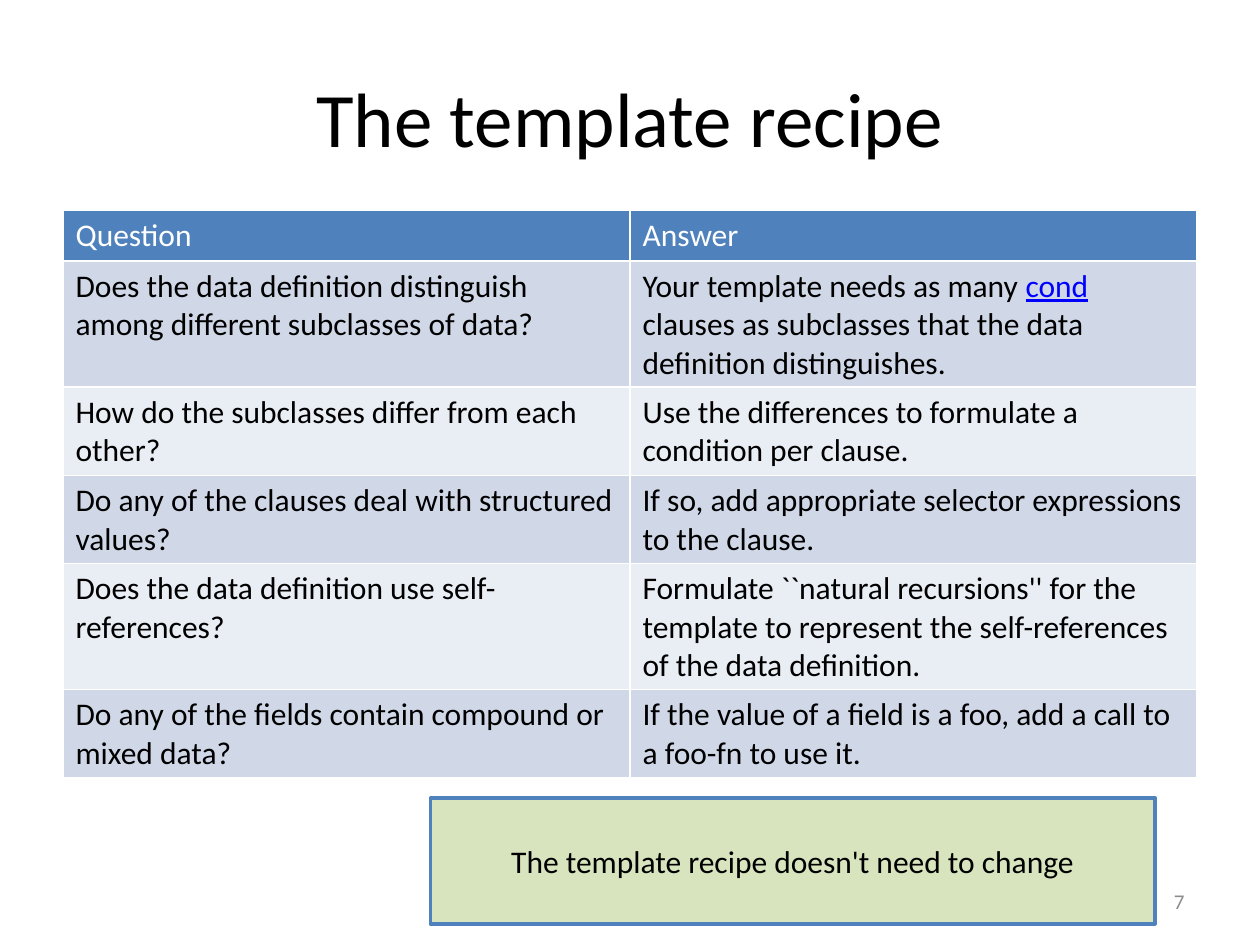
from dataclasses import dataclass

from pptx import Presentation
from pptx.dml.color import RGBColor
from pptx.enum.shapes import MSO_SHAPE
from pptx.enum.text import MSO_ANCHOR, PP_ALIGN
from pptx.util import Pt

RECTANGLE = MSO_SHAPE.RECTANGLE
MIDDLE = MSO_ANCHOR.MIDDLE
LEFT, CENTER, RIGHT = PP_ALIGN.LEFT, PP_ALIGN.CENTER, PP_ALIGN.RIGHT


@dataclass(frozen=True)
class Theme:
    font: str = "Calibri"
    title: int = 44
    body: int = 18
    small: int = 12
    black: RGBColor = RGBColor(0x00, 0x00, 0x00)
    white: RGBColor = RGBColor(0xFF, 0xFF, 0xFF)
    gray: RGBColor = RGBColor(0x8C, 0x8C, 0x8C)
    term: RGBColor = RGBColor(0x00, 0x00, 0xFF)
    accent: RGBColor = RGBColor(0x4F, 0x81, 0xBD)
    note: RGBColor = RGBColor(0xD7, 0xE4, 0xBD)
    bands: tuple = (RGBColor(0xE9, 0xED, 0xF4), RGBColor(0xD0, 0xD8, 0xE8))


THEME = Theme()
TERM = "cond"
ROWS = [
    ("Question", "Answer"),
    ("Does the data definition distinguish among different subclasses of data?",
     "Your template needs as many cond clauses as subclasses that the data "
     "definition distinguishes."),
    ("How do the subclasses differ from each other?",
     "Use the differences to formulate a condition per clause."),
    ("Do any of the clauses deal with structured values?",
     "If so, add appropriate selector expressions to the clause."),
    ("Does the data definition use self-references?",
     "Formulate ``natural recursions'' for the template to represent the "
     "self-references of the data definition."),
    ("Do any of the fields contain compound or mixed data?",
     "If the value of a field is a foo, add a call to a foo-fn to use it."),
]


def style(p, size, color, align=LEFT):
    p.alignment = align
    p.font.name = THEME.font
    p.font.size = Pt(size)
    p.font.color.rgb = color
    p.font.bold = False


def write(sp, text, size, color, align):
    """Fill a shape with one vertically centred paragraph."""
    tf = sp.text_frame
    tf.word_wrap = True
    tf.vertical_anchor = MIDDLE
    tf.text = text
    style(tf.paragraphs[0], size, color, align)


prs = Presentation()
prs.slide_width, prs.slide_height = Pt(720), Pt(540)
s = prs.slides.add_slide(prs.slide_layouts[6])

title = s.shapes.add_textbox(Pt(36), Pt(21.6), Pt(648), Pt(90))
write(title, "The template recipe", THEME.title, THEME.black, CENTER)

# Rows grow to fit their text; the default table style draws the white rules.
table = s.shapes.add_table(len(ROWS), 2, Pt(36), Pt(120), Pt(648), Pt(29.2 * len(ROWS))).table
for i, row in enumerate(ROWS):
    fill = THEME.bands[i % 2] if i else THEME.accent
    color = THEME.black if i else THEME.white
    for j, text in enumerate(row):
        cell = table.cell(i, j)
        cell.fill.solid()
        cell.fill.fore_color.rgb = fill
        p = cell.text_frame.paragraphs[0]
        style(p, THEME.body, color)
        before, term, after = text.partition(f" {TERM} ")
        if not term:
            p.add_run().text = text
            continue
        p.add_run().text = before + " "
        r = p.add_run()
        r.text = TERM
        r.font.underline = True
        r.font.color.rgb = THEME.term
        p.add_run().text = " " + after

note = s.shapes.add_shape(RECTANGLE, Pt(246), Pt(456), Pt(414), Pt(72))
note.shadow.inherit = False
note.fill.solid()
note.fill.fore_color.rgb = THEME.note
note.line.color.rgb = THEME.accent
note.line.width = Pt(2)
write(note, "The template recipe doesn't need to change", THEME.body, THEME.black, CENTER)

number = s.shapes.add_textbox(Pt(516), Pt(500.5), Pt(168), Pt(28.75))
write(number, "7", THEME.small, THEME.gray, RIGHT)

prs.save("out.pptx")
